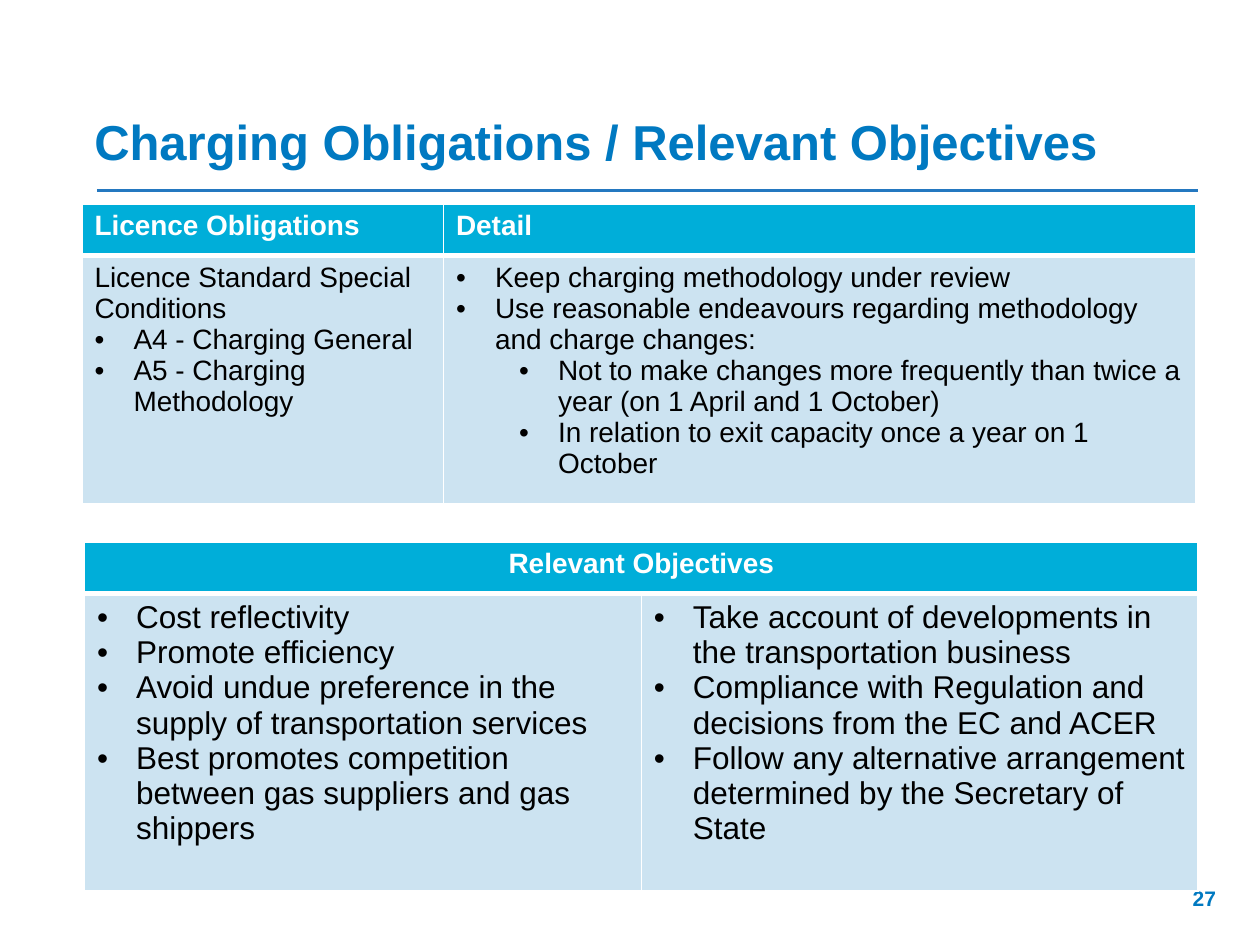
"""Build the charging obligations and relevant objectives slide."""
from lxml import etree
from pptx import Presentation
from pptx.dml.color import RGBColor
from pptx.enum.shapes import MSO_CONNECTOR
from pptx.enum.text import MSO_ANCHOR, PP_ALIGN
from pptx.oxml.ns import qn
from pptx.util import Inches, Pt

STRAIGHT = MSO_CONNECTOR.STRAIGHT
TOP, BOTTOM = MSO_ANCHOR.TOP, MSO_ANCHOR.BOTTOM
LEFT, CENTER, RIGHT = PP_ALIGN.LEFT, PP_ALIGN.CENTER, PP_ALIGN.RIGHT
COLORS = {"title": "0079C1", "rule": "2478C0", "header": "00AED9",
          "body": "CCE3F1", "white": "FFFFFF", "black": "000000"}


def add_text(frame, items, color, align=LEFT, **formats):
    """Write (text, bullet level) items, where level None means no bullet."""
    for index, (text, level) in enumerate(items):
        para = frame.paragraphs[0] if index == 0 else frame.add_paragraph()
        para.alignment = align
        if level is not None:
            para.level = level
            properties = para._p.get_or_add_pPr()
            properties.set("marL", str(Inches(0.31 + 0.5 * level)))
            properties.set("indent", str(-Inches(0.31)))
            etree.SubElement(properties, qn("a:buFont"), typeface="Arial")
            etree.SubElement(properties, qn("a:buChar"), char="•")
        span = para.add_run()
        span.text = text
        span.font.color.rgb = RGBColor.from_string(COLORS[color])
        for name, value in {"name": "Arial", **formats}.items():
            setattr(span.font, name, value)


def style_cell(cell, fill, widths):
    """Set the white borders of a cell and then its fill."""
    properties = cell._tc.get_or_add_tcPr()
    for side, width in zip("LRTB", widths):
        line = etree.SubElement(properties, qn(f"a:ln{side}"), w=str(Pt(width)))
        solid = etree.SubElement(line, qn("a:solidFill"))
        etree.SubElement(solid, qn("a:srgbClr"), val=COLORS["white"])
    cell.fill.solid()
    cell.fill.fore_color.rgb = RGBColor.from_string(COLORS[fill])


deck = Presentation()
deck.slide_width, deck.slide_height = Inches(10), Inches(7.5)
page = deck.slides.add_slide(deck.slide_layouts[6])

rule = page.shapes.add_connector(
    STRAIGHT, Inches(0.77), Inches(1.51), Inches(9.51), Inches(1.51))
rule.line.color.rgb = RGBColor.from_string(COLORS["rule"])
rule.line.width = Pt(1.5)
etree.SubElement(rule._element.spPr, qn("a:effectLst"))

labels = [
    ("Charging Obligations / Relevant Objectives", (0.65, 0.83, 8.85, 0.57), 28, BOTTOM, LEFT),
    ("27", (7.42, 6.98, 2.33, 0.4), 12, TOP, RIGHT),
]
for text, place, size, anchor, align in labels:
    box = page.shapes.add_textbox(*map(Inches, place))
    box.text_frame.word_wrap = True
    box.text_frame.vertical_anchor = anchor
    add_text(box.text_frame, [(text, None)], "title", align, size=Pt(size), bold=True)

obligations = [
    [("Licence Standard Special Conditions", None),
     ("A4 - Charging General", 0),
     ("A5 - Charging Methodology", 0)],
    [("Keep charging methodology under review", 0),
     ("Use reasonable endeavours regarding methodology and charge changes:", 0),
     ("Not to make changes more frequently than twice a year (on 1 April and 1 October)", 1),
     ("In relation to exit capacity once a year on 1 October", 1)],
]
objectives = [
    [("Cost reflectivity", 0),
     ("Promote efficiency", 0),
     ("Avoid undue preference in the supply of transportation services", 0),
     ("Best promotes competition between gas suppliers and gas shippers", 0)],
    [("Take account of developments in the transportation business", 0),
     ("Compliance with Regulation and decisions from the EC and ACER", 0),
     ("Follow any alternative arrangement determined by the Secretary of State", 0)],
]
tables = [
    (0.65, 1.62, (2.87, 5.97), (0.41, 1.82),
     ["Licence Obligations", "Detail"], LEFT, obligations, 16),
    (0.67, 4.3, (4.42, 4.42), (0.41, 2.36),
     ["Relevant Objectives"], CENTER, objectives, 18),
]
for left, top, columns, rows, headings, align, bodies, size in tables:
    table = page.shapes.add_table(
        2, 2, Inches(left), Inches(top), Inches(sum(columns)), Inches(sum(rows))).table
    for column, width in zip(table.columns, columns):
        column.width = Inches(width)
    for row, height in zip(table.rows, rows):
        row.height = Inches(height)
    for index, body in enumerate(bodies):
        style_cell(table.cell(0, index), "header", (1, 1, 1, 3))
        style_cell(table.cell(1, index), "body", (1, 1, 3, 1))
        add_text(table.cell(1, index).text_frame, body, "black", size=Pt(size), bold=False)
    if len(headings) == 1:
        table.cell(0, 0).merge(table.cell(0, 1))
    for index, heading in enumerate(headings):
        add_text(table.cell(0, index).text_frame, [(heading, None)], "white", align,
                 size=Pt(16), bold=True)

deck.save("out.pptx")
